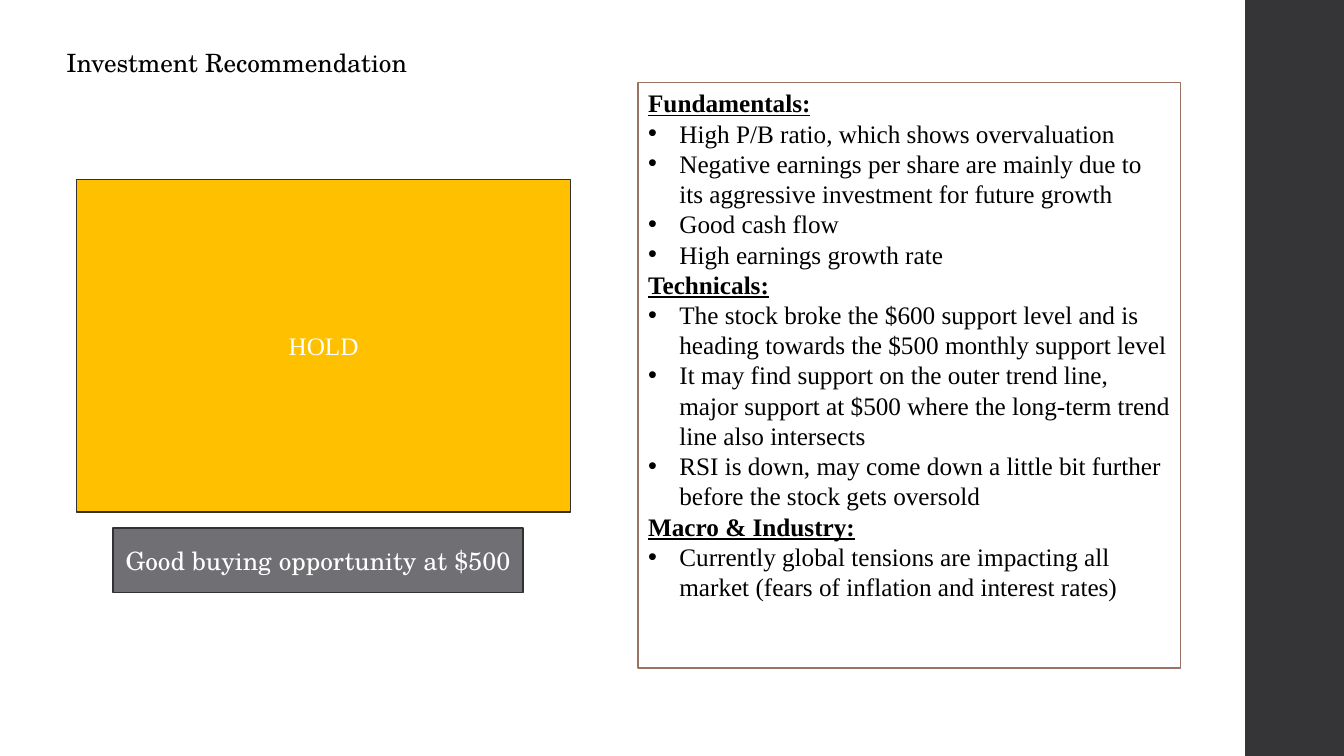
from lxml import etree
from pptx import Presentation
from pptx.dml.color import RGBColor
from pptx.enum.shapes import MSO_SHAPE
from pptx.enum.text import MSO_ANCHOR, PP_ALIGN
from pptx.oxml.ns import qn
from pptx.util import Inches, Pt

RECT = MSO_SHAPE.RECTANGLE
TOP, MIDDLE = MSO_ANCHOR.TOP, MSO_ANCHOR.MIDDLE
LEFT, CENTER = PP_ALIGN.LEFT, PP_ALIGN.CENTER

BLACK = RGBColor(0x00, 0x00, 0x00)
WHITE = RGBColor(0xFF, 0xFF, 0xFF)
DARK = RGBColor(0x35, 0x35, 0x37)
EDGE = RGBColor(0x31, 0x31, 0x33)
AMBER = RGBColor(0xFF, 0xC0, 0x00)
GRAY = RGBColor(0x6F, 0x6F, 0x74)
BROWN = RGBColor(0x9B, 0x73, 0x62)

SCHOLA = "TeX Gyre Schola"
TIMES = "Times New Roman"

REASONS = {
    "Fundamentals:": [
        "High P/B ratio, which shows overvaluation",
        "Negative earnings per share are mainly due to its aggressive "
        "investment for future growth",
        "Good cash flow",
        "High earnings growth rate",
    ],
    "Technicals:": [
        "The stock broke the $600 support level and is heading towards "
        "the $500 monthly support level",
        "It may find support on the outer trend line, major support at $500 "
        "where the long-term trend line also intersects",
        "RSI is down, may come down a little bit further before the stock "
        "gets oversold",
    ],
    "Macro & Industry:": [
        "Currently global tensions are impacting all market (fears of "
        "inflation and interest rates)",
    ],
}


class Page:
    size = Pt(18)
    width = Pt(1.1)
    indent = Inches(0.31)

    def __init__(self, slide):
        self.slide = slide

    def style(self, para, face, color, align=LEFT):
        para.alignment = align
        font = para.font
        font.name, font.size = face, self.size
        font.color.rgb = color

    def text(self, box, words, face):
        frame = self.slide.shapes.add_textbox(*map(Inches, box)).text_frame
        frame.word_wrap = True
        para = frame.paragraphs[0]
        para.text = words
        self.style(para, face, BLACK)

    def rect(self, box, fill, edge=None):
        shape = self.slide.shapes.add_shape(RECT, *map(Inches, box))
        shape.shadow.inherit = False
        shape.fill.solid()
        shape.fill.fore_color.rgb = fill
        if edge is None:
            shape.line.fill.background()
        else:
            shape.line.color.rgb = edge
            shape.line.width = self.width
        return shape

    def label(self, box, fill, words, face):
        frame = self.rect(box, fill, EDGE).text_frame
        frame.word_wrap = True
        frame.vertical_anchor = MIDDLE
        para = frame.paragraphs[0]
        para.text = words
        self.style(para, face, WHITE, CENTER)

    def bullet(self, para):
        props = para._p.get_or_add_pPr()
        props.set("marL", str(self.indent))
        props.set("indent", str(-self.indent))
        etree.SubElement(props, qn("a:buFont"), typeface="Arial")
        etree.SubElement(props, qn("a:buChar"), char="•")

    def panel(self, box, groups):
        frame = self.rect(box, WHITE, BROWN).text_frame
        frame.word_wrap = True
        frame.vertical_anchor = TOP
        rows = [(words, words == head)
                for head, points in groups.items()
                for words in [head, *points]]
        for i, (words, head) in enumerate(rows):
            para = frame.add_paragraph() if i else frame.paragraphs[0]
            para.text = words
            if not head:
                self.bullet(para)
            self.style(para, TIMES, BLACK)
            para.font.bold = para.font.underline = head


def main():
    deck = Presentation()
    deck.slide_width, deck.slide_height = Inches(13.33), Inches(7.5)
    page = Page(deck.slides.add_slide(deck.slide_layouts[6]))

    # Side band and title
    page.rect((12.35, 0, 0.98, 7.5), DARK)
    page.text((0.56, 0.42, 7.95, 0.4), "Investment Recommendation", SCHOLA)

    # Verdict, reasons and entry price
    page.label((0.76, 1.78, 4.9, 3.3), AMBER, "HOLD", TIMES)
    page.panel((6.33, 0.82, 5.38, 5.81), REASONS)
    page.label((1.12, 5.24, 4.07, 0.64), GRAY,
               "Good buying opportunity at $500", SCHOLA)

    deck.save("out.pptx")


if __name__ == "__main__":
    main()
